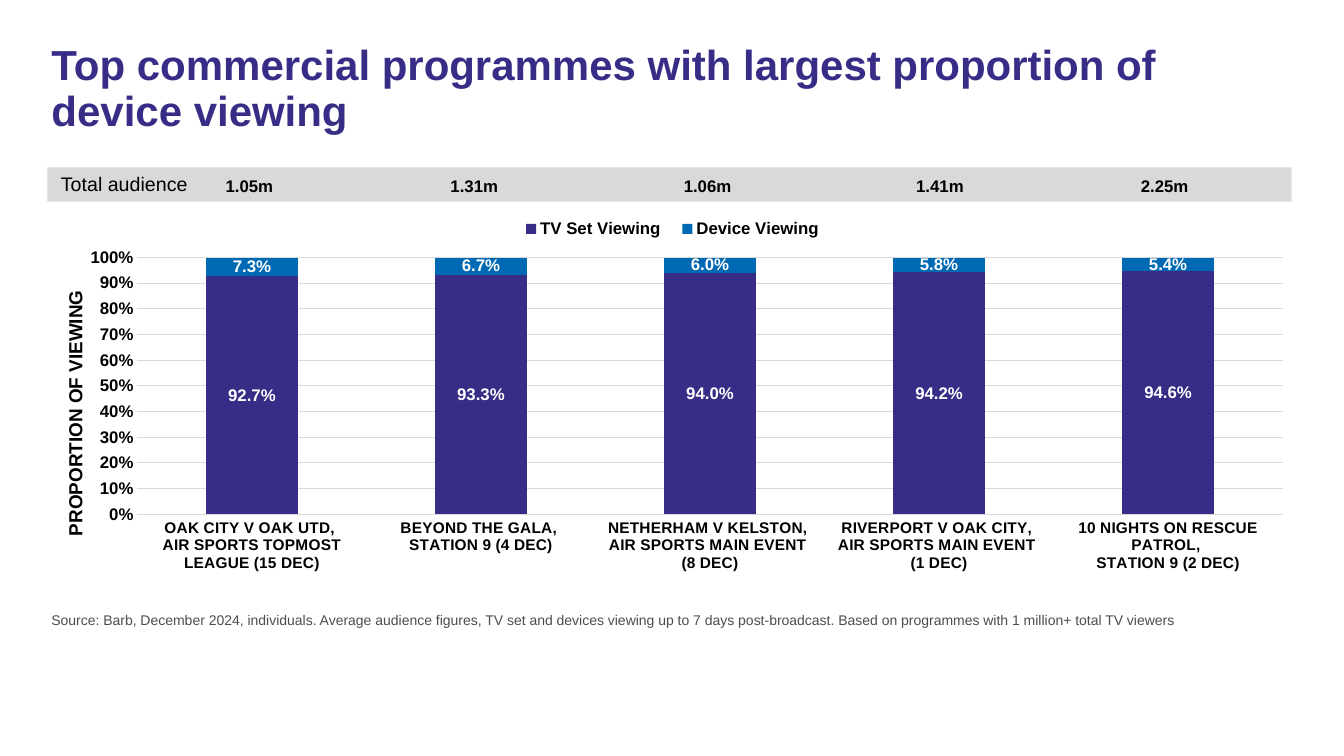
"""Builds the slide on commercial programmes with the largest share of device viewing."""
from dataclasses import dataclass

from lxml import etree
from pptx import Presentation
from pptx import util as u
from pptx.chart import data as cd
from pptx.dml import color
from pptx.enum import chart as ec, shapes, text
from pptx.oxml import ns

PURPLE = color.RGBColor(0x37, 0x2D, 0x87)
BLUE = color.RGBColor(0x00, 0x69, 0xB4)
SILVER = color.RGBColor(0xD9, 0xD9, 0xD9)
GREY = color.RGBColor(0x4D, 0x4D, 0x4D)
BLACK = color.RGBColor(0x00, 0x00, 0x00)
WHITE = color.RGBColor(0xFF, 0xFF, 0xFF)
FONT = "Arial"
SLIDE_W, SLIDE_H = u.Inches(13.33), u.Inches(7.5)


@dataclass(frozen=True)
class Box:
    """A frame in percent of the slide's width and height."""
    left: float
    top: float
    width: float
    height: float

    def emu(self) -> tuple[int, int, int, int]:
        """Return left, top, width and height as slide lengths."""
        return (int(SLIDE_W * self.left / 100), int(SLIDE_H * self.top / 100),
                int(SLIDE_W * self.width / 100), int(SLIDE_H * self.height / 100))


@dataclass(frozen=True)
class Programme:
    """A programme, its viewing shares, and its audience centred at a percent of the width."""
    label: str
    tv_set: float
    device: float
    audience: str
    centre: float


TITLE = Box(3.08, 5.2, 93.02, 14.93)
BAND = Box(3.53, 22.13, 92.57, 4.53)
BAND_LABEL = Box(1.2, 22.13, 13.5, 4.53)
CHART = Box(3.53, 18.13, 93.02, 64)
SOURCE = Box(3.08, 80.27, 93.02, 4.4)
AUDIENCE_TOP, AUDIENCE_W, AUDIENCE_H = 22.53, 7.13, 4

PROGRAMMES = [
    Programme("OAK CITY V OAK UTD, \nAIR SPORTS TOPMOST LEAGUE (15 DEC)", 0.927, 0.073, "1.05m", 18.56),
    Programme("BEYOND THE GALA, \nSTATION 9 (4 DEC)", 0.933, 0.067, "1.31m", 35.29),
    Programme("NETHERHAM V KELSTON, \nAIR SPORTS MAIN EVENT \n(8 DEC)", 0.94, 0.06, "1.06m", 52.65),
    Programme("RIVERPORT V OAK CITY, \nAIR SPORTS MAIN EVENT \n(1 DEC)", 0.942, 0.058, "1.41m", 69.94),
    Programme("10 NIGHTS ON RESCUE PATROL, \nSTATION 9 (2 DEC)", 0.946, 0.054, "2.25m", 86.66),
]


def style(font, size: float, rgb: color.RGBColor, bold: bool = False) -> None:
    """Set typeface, size, colour and weight of a font."""
    font.name, font.size, font.bold = FONT, u.Pt(size), bold
    font.color.rgb = rgb


def write(tf, words: str, size: float, rgb: color.RGBColor, bold: bool = False,
          align=text.PP_ALIGN.LEFT):
    """Write one run into a wrapped text frame and return its paragraph."""
    tf.word_wrap = True
    p = tf.paragraphs[0]
    p.alignment = align
    r = p.add_run()
    r.text = words
    style(r.font, size, rgb, bold)
    return p


def add_text(slide, box: Box, words: str, size: float, rgb: color.RGBColor,
             bold: bool = False, align=text.PP_ALIGN.LEFT) -> None:
    """Add a text box holding one run."""
    tf = slide.shapes.add_textbox(*box.emu()).text_frame
    write(tf, words, size, rgb, bold, align)
    tf.auto_size = text.MSO_AUTO_SIZE.SHAPE_TO_FIT_TEXT


def place(parent, index: int, inner: bool = False, **shares: float) -> None:
    """Place a chart part by shares of the chart's size."""
    layout = parent.find(ns.qn("c:layout"))
    if layout is None:
        layout = etree.Element(ns.qn("c:layout"))
        parent.insert(index, layout)
    manual = etree.SubElement(layout, ns.qn("c:manualLayout"))
    settings = {"layoutTarget": "inner"} if inner else {}
    settings |= {"xMode": "edge", "yMode": "edge", **shares}
    for name, value in settings.items():
        etree.SubElement(manual, ns.qn(f"c:{name}")).set("val", str(value))


def style_axes(chart) -> None:
    """Format the programme axis and the percentage axis."""
    cat, val = chart.category_axis, chart.value_axis
    for axis, size in ((cat, 11), (val, 12)):
        axis.major_tick_mark = axis.minor_tick_mark = ec.XL_TICK_MARK.NONE
        style(axis.tick_labels.font, size, BLACK, True)
    val.minimum_scale, val.maximum_scale, val.major_unit = 0, 1, 0.1
    val.tick_labels.number_format = "0%"
    val.tick_labels.number_format_is_linked = False
    val.format.line.fill.background()
    val.has_major_gridlines = True
    for line in (cat.format.line, val.major_gridlines.format.line):
        line.color.rgb, line.width = SILVER, u.Pt(0.75)
    title = val.axis_title
    r = title.text_frame.paragraphs[0].add_run()
    r.text = "PROPORTION OF VIEWING"
    style(r.font, 13.5, BLACK, True)
    body = title._element.find(".//" + ns.qn("a:bodyPr"))
    body.set("rot", "-5400000")
    body.set("vert", "horz")
    place(title._element, 1, x=0.01, y=0.31)


def add_viewing_chart(slide) -> None:
    """Add the stacked columns of set and device viewing."""
    data = cd.CategoryChartData(number_format="0.0%")
    data.categories = [g.label for g in PROGRAMMES]
    data.add_series("TV Set Viewing", [g.tv_set for g in PROGRAMMES])
    data.add_series("Device Viewing", [g.device for g in PROGRAMMES])
    chart = slide.shapes.add_chart(ec.XL_CHART_TYPE.COLUMN_STACKED_100, *CHART.emu(), data).chart
    chart.has_title = False
    style(chart.font, 10, BLACK)
    clear = etree.Element(ns.qn("c:spPr"))
    etree.SubElement(clear, ns.qn("a:noFill"))
    etree.SubElement(etree.SubElement(clear, ns.qn("a:ln")), ns.qn("a:noFill"))
    chart._chartSpace.find(ns.qn("c:txPr")).addprevious(clear)

    plot = chart.plots[0]
    plot.gap_width, plot.overlap, plot.vary_by_categories = 150, 100, False
    for series, rgb in zip(plot.series, (PURPLE, BLUE)):
        series.format.fill.solid()
        series.format.fill.fore_color.rgb = rgb
        labels = series.data_labels
        labels.show_value = True
        labels.number_format, labels.number_format_is_linked = "0.0%", False
        style(labels.font, 12, WHITE, True)
    style_axes(chart)

    chart.has_legend = True
    legend = chart.legend
    legend.position, legend.include_in_layout = ec.XL_LEGEND_POSITION.BOTTOM, False
    style(legend.font, 12, BLACK, True)
    place(legend._element, 1, x=0.37, y=0.16, w=0.26, h=0.06)
    plot_area = chart._chartSpace.find(".//" + ns.qn("c:plotArea"))
    place(plot_area, 0, inner=True, x=0.072, y=0.249, w=0.916, h=0.531)


def main() -> None:
    """Build and save the slide."""
    prs = Presentation()
    prs.slide_width, prs.slide_height = SLIDE_W, SLIDE_H
    slide = prs.slides.add_slide(prs.slide_layouts[5])

    title = slide.shapes.title
    title.left, title.top, title.width, title.height = TITLE.emu()
    tf = title.text_frame
    tf.vertical_anchor = text.MSO_ANCHOR.TOP
    tf.auto_size = text.MSO_AUTO_SIZE.NONE
    p = write(tf, "Top commercial programmes with largest proportion of device viewing",
              30, PURPLE, True)
    p.line_spacing = 0.9

    band = slide.shapes.add_shape(shapes.MSO_SHAPE.RECTANGLE, *BAND.emu())
    band.shadow.inherit = False
    band.fill.solid()
    band.fill.fore_color.rgb = SILVER
    band.line.fill.background()

    add_viewing_chart(slide)
    add_text(slide, SOURCE, "Source: Barb, December 2024, individuals. Average audience figures, "
             "TV set and devices viewing up to 7 days post-broadcast. "
             "Based on programmes with 1 million+ total TV viewers", 10, GREY)
    add_text(slide, BAND_LABEL, "Total audience", 14, BLACK, align=text.PP_ALIGN.RIGHT)
    for g in PROGRAMMES:
        box = Box(g.centre - AUDIENCE_W / 2, AUDIENCE_TOP, AUDIENCE_W, AUDIENCE_H)
        add_text(slide, box, g.audience, 12, BLACK, True, text.PP_ALIGN.CENTER)
    prs.save("out.pptx")


if __name__ == "__main__":
    main()
